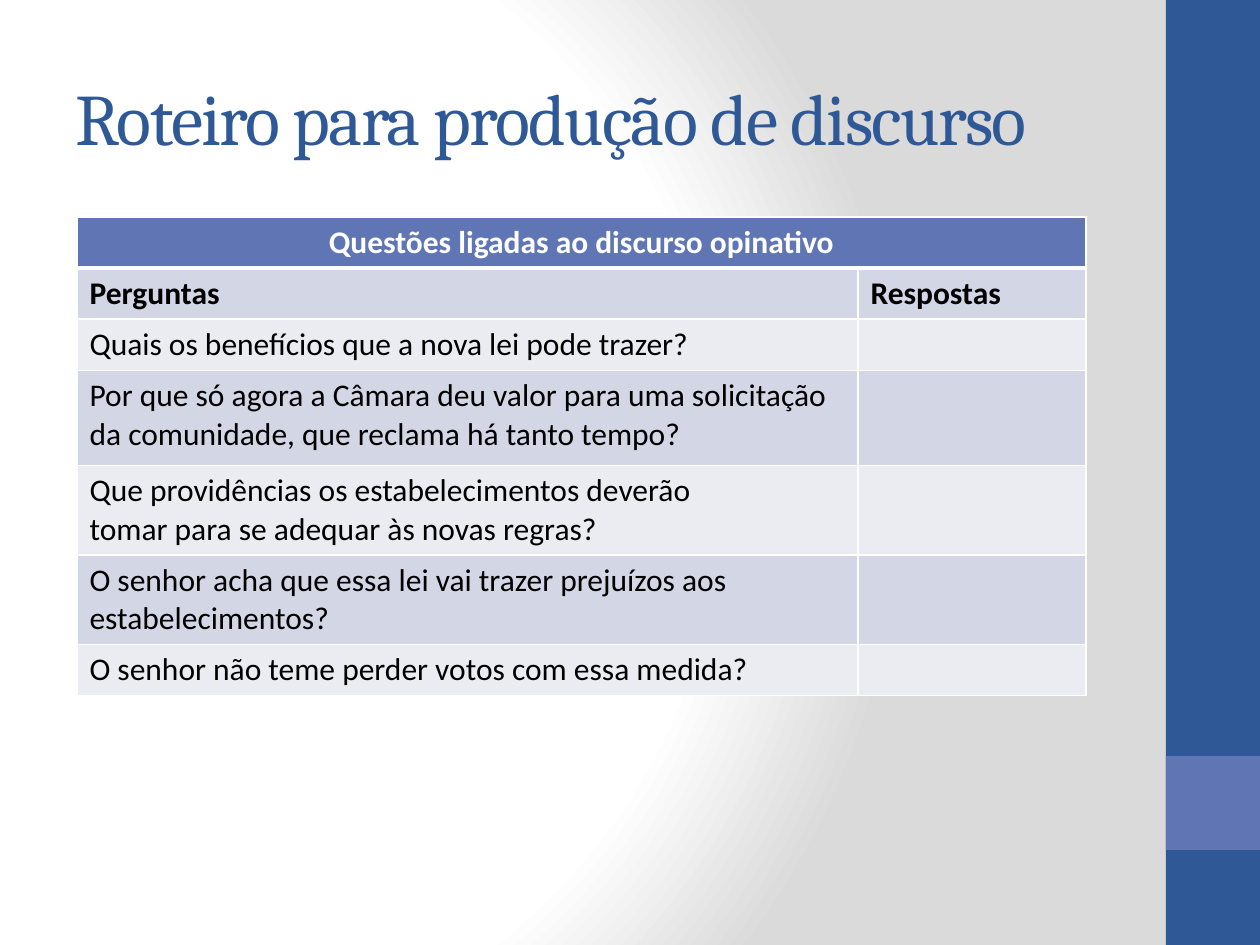
from lxml.etree import SubElement, fromstring
from pptx import Presentation
from pptx.dml.color import RGBColor
from pptx.enum.shapes import MSO_SHAPE
from pptx.enum.text import MSO_ANCHOR, PP_ALIGN
from pptx.oxml.ns import nsdecls, qn
from pptx.util import Pt

PX = 914400 // 126
SLIDE_WIDTH, SLIDE_HEIGHT = 1260, 945
COLORS = {
    "navy": "2F5897", "blue": "6076B4", "white": "FFFFFF", "black": "000000",
    "gray": "DADADA", "band_dark": "D2D6E5", "band_light": "EAECF2",
}
HEADING = "Questões ligadas ao discurso opinativo"
COLUMN_WIDTHS = [781, 228]
# Question text and row height
QUESTIONS = [
    ("Quais os benefícios que a nova lei pode trazer?", 48),
    ("Por que só agora a Câmara deu valor para uma solicitação "
     "da comunidade, que reclama há tanto tempo?", 95),
    ("Que providências os estabelecimentos deverão\n"
     "tomar para se adequar às novas regras?", 83),
    ("O senhor acha que essa lei vai trazer prejuízos aos\n"
     "estabelecimentos?", 83),
    ("O senhor não teme perder votos com essa medida?", 48),
]


def px(*lengths):
    return [length * PX for length in lengths]


def rgb(name):
    return RGBColor.from_string(COLORS[name])


def write_text(frame, text, size=18, font="Calibri", color="black",
               bold=False, align=PP_ALIGN.LEFT, spacing=None):
    frame.text = text
    for paragraph in frame.paragraphs:
        paragraph.alignment = align
        for run in paragraph.runs:
            run.font.size = Pt(size)
            run.font.name = font
            run.font.bold = bold
            run.font.color.rgb = rgb(color)
            if spacing is not None:
                run.font._element.set("spc", str(spacing * 100))


def paint_background(slide):
    slide.background.fill.solid()
    properties = slide.element.find(".//" + qn("p:bgPr"))
    properties.remove(properties.find(qn("a:solidFill")))
    stops = "".join(
        f'<a:gs pos="{position * 1000}"><a:srgbClr val="{COLORS[name]}"/></a:gs>'
        for position, name in [(0, "white"), (75, "white"), (100, "gray")])
    properties.insert(0, fromstring(
        f'<a:gradFill {nsdecls("a")} rotWithShape="1"><a:gsLst>{stops}</a:gsLst>'
        '<a:path path="circle"><a:fillToRect l="20000" t="50000" r="100000" '
        'b="50000"/></a:path></a:gradFill>'))


def add_block(slide, left, top, width, height, color):
    shape = slide.shapes.add_shape(
        MSO_SHAPE.RECTANGLE, *px(left, top, width, height))
    shape.shadow.inherit = False
    shape.fill.solid()
    shape.fill.fore_color.rgb = rgb(color)
    shape.line.fill.background()


def add_side_band(slide, left, top, width, height):
    add_block(slide, left, top, width, height, "navy")
    add_block(slide, left, top + height * 4 // 5, width, width, "blue")


def place_title(slide, left, top, width, height):
    title = slide.shapes.title
    title.left, title.top, title.width, title.height = px(left, top, width, height)
    title.text_frame.word_wrap = True
    title.text_frame.vertical_anchor = MSO_ANCHOR.MIDDLE
    write_text(title.text_frame, "Roteiro para produção de discurso",
               size=41.4, font="Cambria", color="navy", spacing=-1)


def format_cell(cell, fill, top=1, bottom=1):
    cell.fill.solid()
    cell.fill.fore_color.rgb = rgb(fill)
    properties = cell._tc.get_or_add_tcPr()
    borders = [("L", 1), ("R", 1), ("T", top), ("B", bottom)]
    for index, (side, points) in enumerate(borders):
        line = SubElement(properties, qn(f"a:ln{side}"), w=str(Pt(points)))
        line_fill = SubElement(line, qn("a:solidFill"))
        SubElement(line_fill, qn("a:srgbClr"), val=COLORS["white"])
        properties.insert(index, line)


def add_question_table(slide, left, top):
    heights = [48, 48] + [height for _, height in QUESTIONS]
    table = slide.shapes.add_table(
        len(heights), len(COLUMN_WIDTHS),
        *px(left, top, sum(COLUMN_WIDTHS), sum(heights))).table
    for column, width in zip(table.columns, COLUMN_WIDTHS):
        column.width = width * PX
    # Fills and borders, with a thick rule under the heading
    for index, height in enumerate(heights):
        table.rows[index].height = height * PX
        band = "band_dark" if index % 2 else "band_light"
        for cell in table.rows[index].cells:
            format_cell(cell, "blue" if index == 0 else band,
                        top=3 if index == 1 else 1,
                        bottom=3 if index == 0 else 1)
    # Heading, column names and questions
    table.cell(0, 0).merge(table.cell(0, 1))
    write_text(table.cell(0, 0).text_frame, HEADING, color="white",
               bold=True, align=PP_ALIGN.CENTER)
    for column, name in enumerate(["Perguntas", "Respostas"]):
        write_text(table.cell(1, column).text_frame, name, bold=True)
    for row, (question, _) in enumerate(QUESTIONS, start=2):
        write_text(table.cell(row, 0).text_frame, question)


def main():
    presentation = Presentation()
    presentation.slide_width, presentation.slide_height = px(
        SLIDE_WIDTH, SLIDE_HEIGHT)
    slide = presentation.slides.add_slide(presentation.slide_layouts[5])
    paint_background(slide)
    add_side_band(slide, 1166, 0, SLIDE_WIDTH - 1166, SLIDE_HEIGHT)
    place_title(slide, 63, 38, 1050, 158)
    add_question_table(slide, 77, 217)
    presentation.save("out.pptx")


if __name__ == "__main__":
    main()
